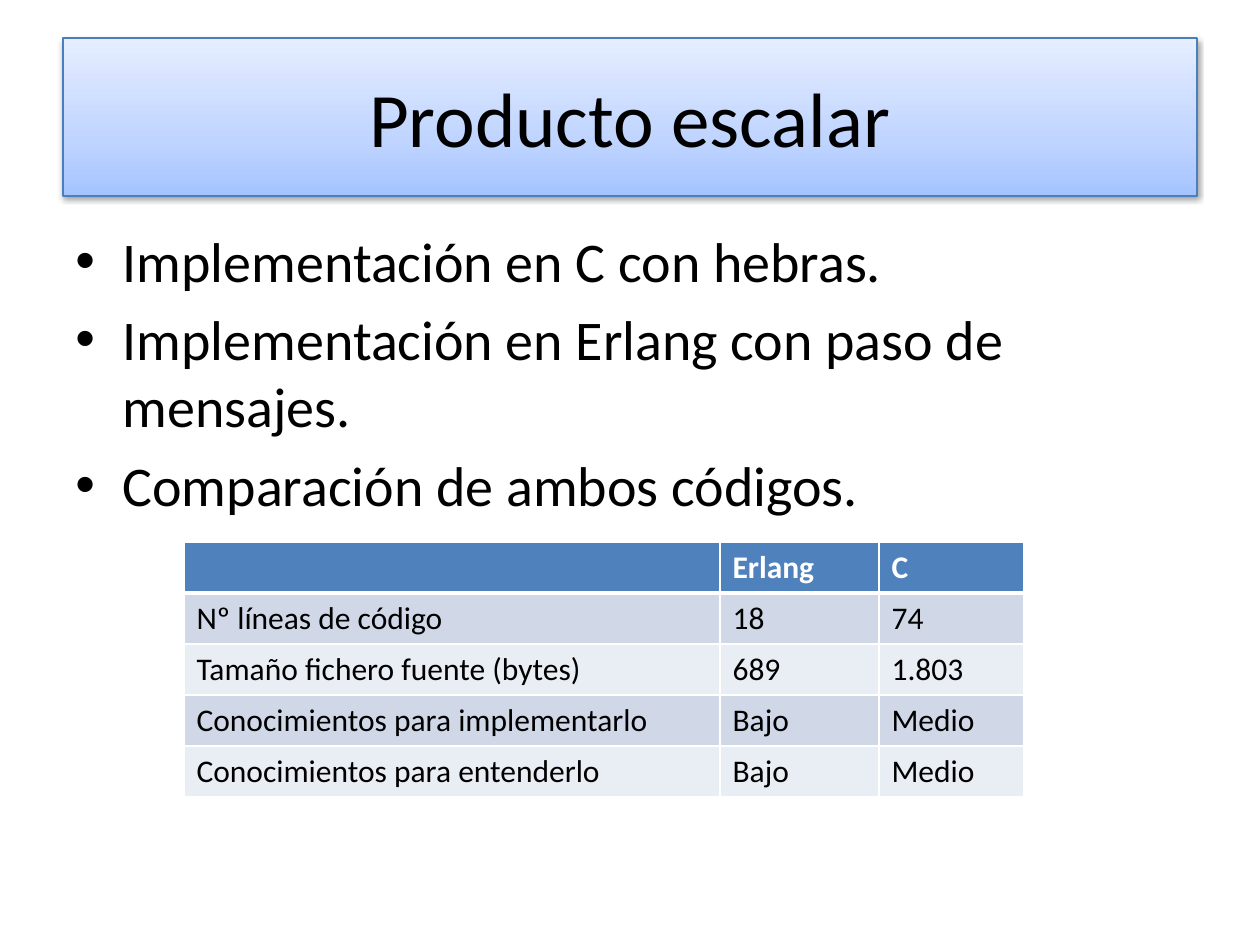
from copy import deepcopy
from dataclasses import dataclass

from lxml import etree
from pptx import Presentation
from pptx import util as u
from pptx.dml.color import RGBColor
from pptx.enum import shapes, text
from pptx.oxml.ns import qn

PX = u.Inches(1) / 126
FONT = "Calibri"
BLACK = RGBColor(0x00, 0x00, 0x00)
WHITE = RGBColor(0xFF, 0xFF, 0xFF)
TITLE_LINE = RGBColor(0x4B, 0x7E, 0xBC)
TITLE_GRADIENT = (
    (0, RGBColor(0xA4, 0xC4, 0xFF)),
    (0.35, RGBColor(0xBF, 0xD4, 0xFF)),
    (1, RGBColor(0xE6, 0xEE, 0xFF)),
)
HEADER_FILL = RGBColor(0x4F, 0x81, 0xBD)
BAND_FILLS = (RGBColor(0xD0, 0xD8, 0xE8), RGBColor(0xE9, 0xED, 0xF4))

BULLETS = (
    "Implementación en C con hebras.",
    "Implementación en Erlang con paso de mensajes.",
    "Comparación de ambos códigos.",
)
COMPARISON = (
    ("", "Erlang", "C"),
    ("Nº líneas de código", "18", "74"),
    ("Tamaño fichero fuente (bytes)", "689", "1.803"),
    ("Conocimientos para implementarlo", "Bajo", "Medio"),
    ("Conocimientos para entenderlo", "Bajo", "Medio"),
)
COLUMN_WIDTHS = (536, 159, 145)
ROW_HEIGHT = 51


@dataclass(frozen=True)
class Box:
    left: int
    top: int
    width: int
    height: int

    def emu(self) -> tuple[u.Emu, ...]:
        return tuple(px(n) for n in (self.left, self.top, self.width, self.height))


@dataclass(frozen=True)
class TextStyle:
    size: int
    color: RGBColor = BLACK
    bold: bool = False

    def apply(self, paragraph) -> None:
        font = paragraph.font
        font.name = FONT
        font.size = u.Pt(self.size)
        font.bold = self.bold
        font.color.rgb = self.color


TITLE_STYLE = TextStyle(44)
BULLET_STYLE = TextStyle(32)
HEADER_STYLE = TextStyle(18, WHITE, True)
CELL_STYLE = TextStyle(18)


def px(length: int) -> u.Emu:
    return u.Emu(round(length * PX))


def add_child(parent, tag: str, **attributes):
    child = etree.SubElement(parent, qn(tag))
    for name, value in attributes.items():
        child.set(name, str(value))
    return child


def add_drop_shadow(shape) -> None:
    shape.shadow.inherit = False
    effects = shape._element.spPr.find(qn("a:effectLst"))
    shadow = add_child(effects, "a:outerShdw", blurRad=40000, dist=20000,
                       dir=5400000, rotWithShape=0)
    color = add_child(shadow, "a:srgbClr", val=BLACK)
    add_child(color, "a:alpha", val=38000)


def fill_title_gradient(shape) -> None:
    shape.fill.gradient()
    shape.fill.gradient_angle = 90
    stop_list = shape._element.spPr.find(".//" + qn("a:gsLst"))
    stop_list.append(deepcopy(stop_list[0]))
    for stop, (position, color) in zip(shape.fill.gradient_stops, TITLE_GRADIENT):
        stop.position = position
        stop.color.rgb = color


def add_title(slide, box: Box, title: str) -> None:
    shape = slide.shapes.add_shape(shapes.MSO_SHAPE.RECTANGLE, *box.emu())
    fill_title_gradient(shape)
    shape.line.color.rgb = TITLE_LINE
    shape.line.width = u.Pt(0.75)
    add_drop_shadow(shape)
    frame = shape.text_frame
    frame.vertical_anchor = text.MSO_ANCHOR.MIDDLE
    paragraph = frame.paragraphs[0]
    paragraph.text = title
    paragraph.alignment = text.PP_ALIGN.CENTER
    TITLE_STYLE.apply(paragraph)


def add_bullets(slide, box: Box, items: tuple[str, ...]) -> None:
    frame = slide.shapes.add_textbox(*box.emu()).text_frame
    frame.word_wrap = True
    for index, item in enumerate(items):
        paragraph = frame.add_paragraph() if index else frame.paragraphs[0]
        paragraph.text = item
        if index:
            paragraph.space_before = u.Pt(6.4)
        properties = paragraph._p.get_or_add_pPr()
        properties.set("marL", "342900")
        properties.set("indent", "-342900")
        add_child(properties, "a:buFont", typeface="Arial")
        add_child(properties, "a:buChar", char="•")
        BULLET_STYLE.apply(paragraph)


def add_borders(cell, top: int, bottom: int) -> None:
    """Draw white borders; top and bottom are widths in points."""
    properties = cell._tc.get_or_add_tcPr()
    for side, width in (("L", 1), ("R", 1), ("T", top), ("B", bottom)):
        line = add_child(properties, f"a:ln{side}", w=u.Pt(width))
        fill = add_child(line, "a:solidFill")
        add_child(fill, "a:srgbClr", val=WHITE)


def add_comparison(slide, left: int, top: int) -> None:
    box = Box(left, top, sum(COLUMN_WIDTHS), ROW_HEIGHT * len(COMPARISON))
    table = slide.shapes.add_table(
        len(COMPARISON), len(COLUMN_WIDTHS), *box.emu()).table
    for column, width in zip(table.columns, COLUMN_WIDTHS):
        column.width = px(width)
    for r, values in enumerate(COMPARISON):
        is_header = r == 0
        for c, value in enumerate(values):
            cell = table.cell(r, c)
            add_borders(cell, 3 if r == 1 else 1, 3 if is_header else 1)
            cell.fill.solid()
            cell.fill.fore_color.rgb = (
                HEADER_FILL if is_header else BAND_FILLS[(r - 1) % 2])
            paragraph = cell.text_frame.paragraphs[0]
            paragraph.text = value
            (HEADER_STYLE if is_header else CELL_STYLE).apply(paragraph)


def main() -> None:
    presentation = Presentation()
    presentation.slide_width = px(1260)
    presentation.slide_height = px(945)
    slide = presentation.slides.add_slide(presentation.slide_layouts[6])
    add_bullets(slide, Box(63, 220, 1134, 624), BULLETS)
    add_title(slide, Box(63, 38, 1134, 158), "Producto escalar")
    add_comparison(slide, 184, 542)
    presentation.save("out.pptx")


if __name__ == "__main__":
    main()
